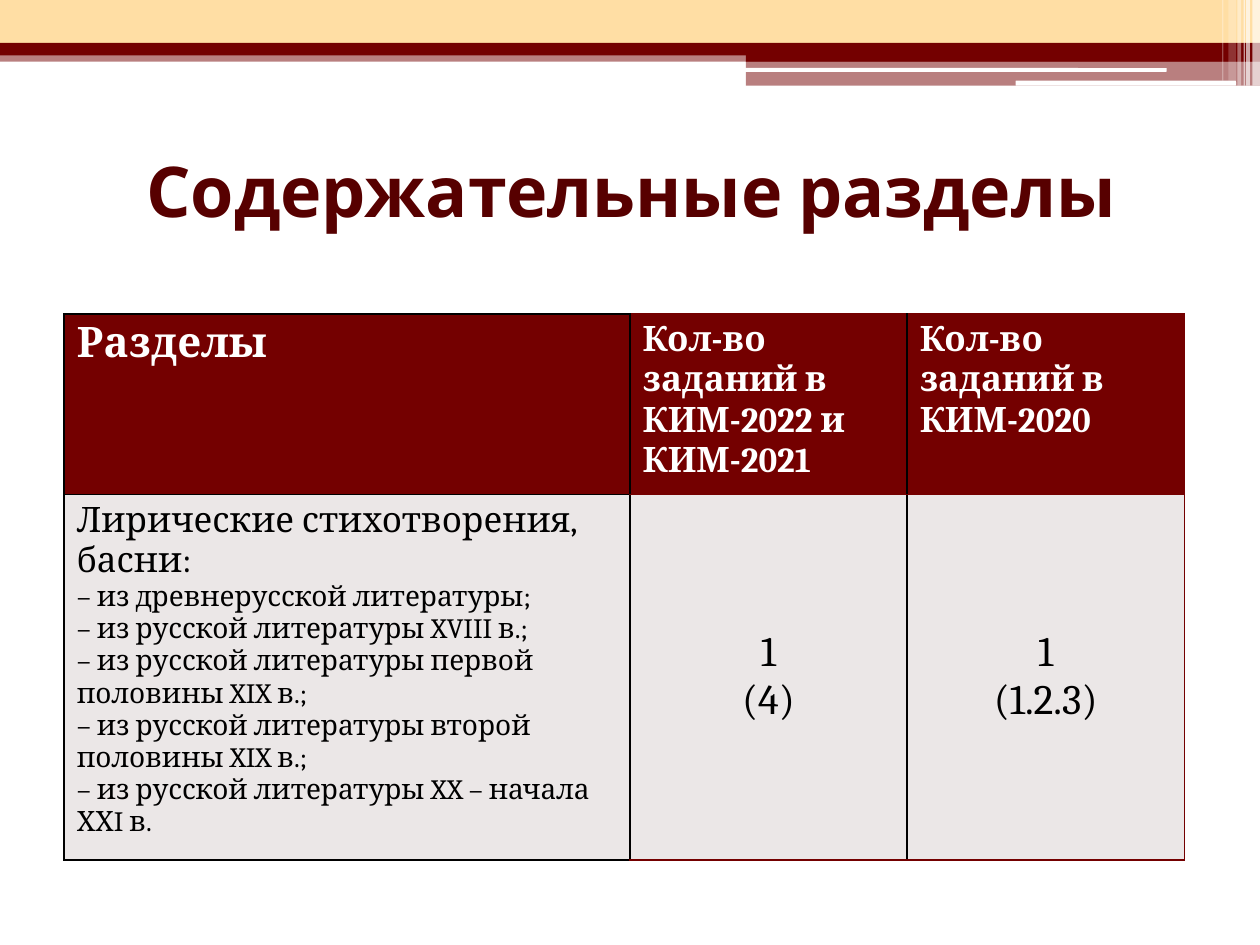
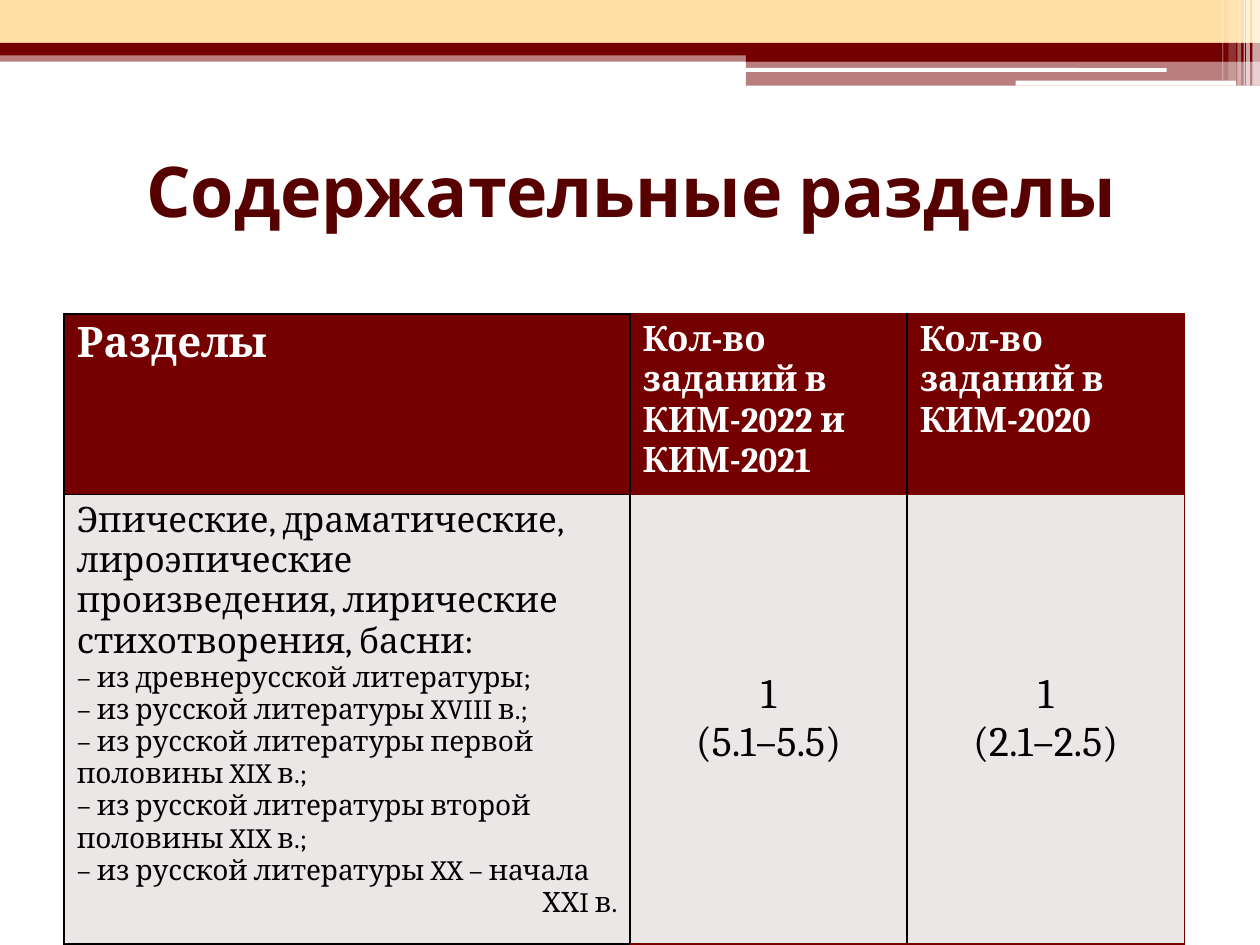
from lxml import etree
from pptx import Presentation
from pptx.dml.color import RGBColor
from pptx.enum import shapes, text
from pptx.oxml.ns import qn
from pptx.util import Inches, Pt

COLORS = {
    "maroon": "740000",
    "title": "570000",
    "cream": "FFDEA4",
    "cell": "EBE7E7",
    "white": "FFFFFF",
    "black": "000000",
}
HEADING_FONT, BODY_FONT = "Cabin", "Cambria"
RECT = shapes.MSO_SHAPE.RECTANGLE
ROUNDED = shapes.MSO_SHAPE.ROUNDED_RECTANGLE
CENTER, RIGHT = text.PP_ALIGN.CENTER, text.PP_ALIGN.RIGHT
MIDDLE = text.MSO_ANCHOR.MIDDLE

BANDS = [
    (0, 0.4, 10, 0.09, "maroon", 50),
    (0, 0, 10, 0.34, "cream", 100),
    (0, 0.34, 10, 0.1, "maroon", 100),
    (5.92, 0.39, 4.08, 0.1, "maroon", 100),
    (5.92, 0.48, 4.08, 0.2, "maroon", 50),
]
HIGHLIGHTS = [(5.91, 0.54, 3.35, 0.03), (8.06, 0.64, 1.75, 0.04)]
STRIPES = [
    (9.94, 0.06, 0.68, 65),
    (9.89, 0.03, 0.68, 65),
    (9.87, 0.01, 0.68, 60),
    (9.82, 0.03, 0.68, 40),
    (9.75, 0.06, 0.64, 20),
    (9.7, 0.01, 0.64, 30),
]

COLUMN_WIDTHS = [4.49, 2.2, 2.2]
HEADER_HEIGHT = 1.38
HEADERS = [
    (["Разделы"], 24),
    (["Кол-во", "заданий в КИМ-2022 и КИМ-2021"], 20),
    (["Кол-во заданий в КИМ-2020"], 20),
]
PERIODS = [
    "– из древнерусской литературы;",
    "– из русской литературы XVIII в.;",
    "– из русской литературы первой половины XIX в.;",
    "– из русской литературы второй половины XIX в.;",
]
LAST_PERIOD = ["– из русской литературы XX – начала", "ХХI в."]


def rgb(name):
    return RGBColor.from_string(COLORS[name])


def add_band(slide, x, y, w, h, color, alpha=100, kind=RECT):
    sp = slide.shapes.add_shape(kind, Inches(x), Inches(y), Inches(w), Inches(h))
    sp.shadow.inherit = False
    sp.line.fill.background()
    sp.fill.solid()
    sp.fill.fore_color.rgb = rgb(color)
    if alpha < 100:
        clr = sp.fill._xPr.find(qn("a:solidFill"))[0]
        etree.SubElement(clr, qn("a:alpha"), val=str(alpha * 1000))
    return sp


def add_text(tf, content, size, color="black", font=BODY_FONT, bold=False,
             align=None, first=False):
    p = tf.paragraphs[0] if first else tf.add_paragraph()
    p.alignment = align
    r = p.add_run()
    r.text = content
    r.font.size = Pt(size)
    r.font.name = font
    r.font.bold = bold
    r.font.color.rgb = rgb(color)


def add_decoration(slide):
    for x, y, w, h, color, alpha in BANDS:
        add_band(slide, x, y, w, h, color, alpha)
    for x, y, w, h in HIGHLIGHTS:
        sp = add_band(slide, x, y, w, h, "white", kind=ROUNDED)
        sp.adjustments[0] = 0.17
    for x, w, h, alpha in STRIPES:
        add_band(slide, x, 0, w, h, "white", alpha)


def add_title(slide, content):
    sp = slide.shapes.add_textbox(Inches(0.51), Inches(0.92), Inches(9), Inches(1.17))
    tf = sp.text_frame
    tf.word_wrap = True
    tf.vertical_anchor = MIDDLE
    add_text(tf, content, 40, color="title", font=HEADING_FONT, bold=True,
             align=CENTER, first=True)


def style_cell(cell, fill, column):
    edge = "black" if column == 0 else "maroon"
    right = "maroon" if column == len(COLUMN_WIDTHS) - 1 else "black"
    tcPr = cell._tc.get_or_add_tcPr()
    for side, color in zip("LRTB", ("black", right, edge, edge)):
        ln = etree.SubElement(tcPr, qn("a:ln" + side), w=str(Pt(1)))
        solid = etree.SubElement(ln, qn("a:solidFill"))
        etree.SubElement(solid, qn("a:srgbClr"), val=COLORS[color])
    cell.fill.solid()
    cell.fill.fore_color.rgb = rgb(fill)


def add_sections_table(slide, body_height, heading, periods, counts):
    frame = slide.shapes.add_table(
        2, len(COLUMN_WIDTHS), Inches(0.51), Inches(2.49),
        Inches(sum(COLUMN_WIDTHS)), Inches(HEADER_HEIGHT + body_height))
    table = frame.table
    for row, height in zip(table.rows, (HEADER_HEIGHT, body_height)):
        row.height = Inches(height)
    for i, width in enumerate(COLUMN_WIDTHS):
        table.columns[i].width = Inches(width)
        style_cell(table.cell(0, i), "maroon", i)
        style_cell(table.cell(1, i), "cell", i)

    for i, (lines, size) in enumerate(HEADERS):
        for j, line in enumerate(lines):
            add_text(table.cell(0, i).text_frame, line, size, color="white",
                     bold=True, first=j == 0)

    tf = table.cell(1, 0).text_frame
    add_text(tf, heading, 20, first=True)
    for content, align in periods:
        add_text(tf, content, 16, align=align)

    for i, tasks in enumerate(counts, start=1):
        cell = table.cell(1, i)
        cell.vertical_anchor = MIDDLE
        add_text(cell.text_frame, "1", 24, align=CENTER, first=True)
        add_text(cell.text_frame, tasks, 24, align=CENTER)


def add_sections_slide(prs, *table_content):
    slide = prs.slides.add_slide(prs.slide_layouts[6])
    add_decoration(slide)
    add_title(slide, "Содержательные разделы")
    add_sections_table(slide, *table_content)


def main():
    prs = Presentation()
    prs.slide_width, prs.slide_height = Inches(10), Inches(7.5)
    periods = [(line, None) for line in PERIODS]
    start, end = LAST_PERIOD
    add_sections_slide(
        prs, 2.78, "Лирические стихотворения, басни:",
        periods + [(f"{start} {end}", None)], ["(4)", "(1.2.3)"])
    add_sections_slide(
        prs, 3.42,
        "Эпические, драматические, лироэпические произведения, "
        "лирические стихотворения, басни:",
        periods + [(start, None), (end, RIGHT)], ["(5.1–5.5)", "(2.1–2.5)"])
    prs.save("out.pptx")


if __name__ == "__main__":
    main()
